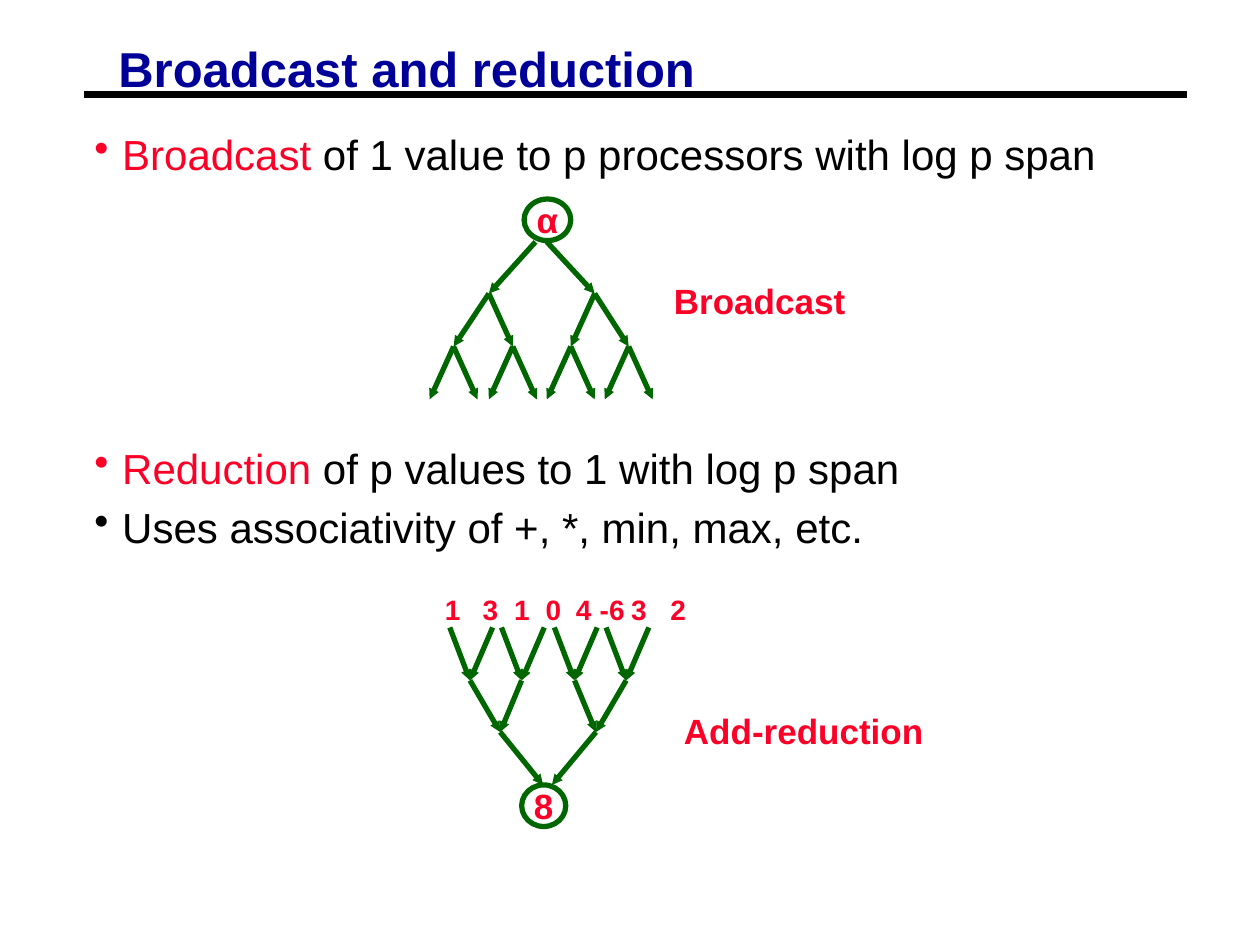
from dataclasses import dataclass

from lxml.etree import SubElement
from pptx import Presentation
from pptx.dml.color import RGBColor
from pptx.enum.shapes import MSO_CONNECTOR, MSO_SHAPE
from pptx.enum.text import MSO_ANCHOR, PP_ALIGN
from pptx.oxml.ns import qn
from pptx.util import Inches, Pt

FONT = "Arial"
NAVY, BLACK, RED, GREEN = "000099", "000000", "FC0128", "006600"


@dataclass
class Run:
    text: str
    size: float
    color: str
    bold: bool = False


@dataclass
class Bullet:
    runs: list[Run]
    space_before: float = 0


@dataclass
class Tree:
    """Binary tree, given by the x of its nodes and the y of its levels."""
    root_ends: list[float]
    inner: list[float]
    lower: list[float]
    leaf_offsets: tuple[float, float]
    levels: list[float]  # from root to leaves
    upward: bool  # arrows run from the leaves to the root


@dataclass
class Label:
    run: Run
    left: float
    top: float
    width: float


def rgb(color: str) -> RGBColor:
    return RGBColor.from_string(color)


def add_run(paragraph, run: Run) -> None:
    part = paragraph.add_run()
    part.text = run.text
    font = part.font
    font.name, font.size, font.bold = FONT, Pt(run.size), run.bold
    font.color.rgb = rgb(run.color)


def add_text_frame(slide, left: float, top: float, width: float, height: float,
                   side: float = 0.1, edge: float = 0.05):
    box = slide.shapes.add_textbox(Inches(left), Inches(top), Inches(width), Inches(height))
    frame = box.text_frame
    frame.word_wrap = True
    frame.margin_left = frame.margin_right = Inches(side)
    frame.margin_top = frame.margin_bottom = Inches(edge)
    return frame


def add_line(slide, start: tuple[float, float], end: tuple[float, float],
             color: str, width: float, arrow: bool = False) -> None:
    line = slide.shapes.add_connector(
        MSO_CONNECTOR.STRAIGHT, *(Inches(value) for value in (*start, *end)))
    line.line.color.rgb = rgb(color)
    line.line.width = Pt(width)
    if arrow:
        SubElement(line.line._get_or_add_ln(), qn("a:tailEnd"), type="triangle", w="sm", len="sm")
    SubElement(line._element.spPr, qn("a:effectLst"))


def add_bullet(paragraph, bullet: Bullet) -> None:
    paragraph.space_before = Pt(bullet.space_before)
    properties = paragraph._p.get_or_add_pPr()
    properties.set("marL", str(Inches(0.22)))
    properties.set("indent", str(-Inches(0.22)))
    SubElement(properties, qn("a:buChar"), char="•")
    for run in bullet.runs:
        add_run(paragraph, run)


def add_node(slide, text: str, left: float, top: float, width: float) -> None:
    node = slide.shapes.add_shape(
        MSO_SHAPE.OVAL, Inches(left), Inches(top), Inches(width), Inches(0.33))
    node.shadow.inherit = False
    node.fill.background()
    node.line.color.rgb = rgb(GREEN)
    node.line.width = Pt(3)
    frame = node.text_frame
    frame.word_wrap = False
    frame.vertical_anchor = MSO_ANCHOR.MIDDLE
    frame.paragraphs[0].alignment = PP_ALIGN.CENTER
    add_run(frame.paragraphs[0], Run(text, 20, RED, True))


def add_tree(slide, tree: Tree) -> None:
    leaves = [x + offset for x in tree.lower for offset in tree.leaf_offsets]
    # Each level pairs the x of every parent end with the x of its child
    rows = [
        list(zip(tree.root_ends, tree.inner)),
        [(tree.inner[i // 2], x) for i, x in enumerate(tree.lower)],
        [(tree.lower[i // 2], x) for i, x in enumerate(leaves)],
    ]
    for row, parent_y, child_y in zip(rows, tree.levels, tree.levels[1:]):
        for parent_x, child_x in row:
            parent, child = (parent_x, parent_y), (child_x, child_y)
            start, end = (child, parent) if tree.upward else (parent, child)
            add_line(slide, start, end, GREEN, 3, arrow=True)


def add_values(slide, values: list[str], tab_stops: list[float]) -> None:
    frame = add_text_frame(slide, 3.31, 4.65, 2.42, 0.37)
    frame.margin_left = Inches(0.22)
    paragraph = frame.paragraphs[0]
    stops = SubElement(paragraph._p.get_or_add_pPr(), qn("a:tabLst"))
    for stop in tab_stops:
        SubElement(stops, qn("a:tab"), pos=str(Inches(stop)), algn="l")
    add_run(paragraph, Run("\t".join(values), 16, RED, True))


BULLETS = [
    Bullet([Run("Broadcast", 24, RED),
            Run(" of 1 value to p processors with log p span", 24, BLACK)]),
    Bullet([Run("Reduction", 24, RED),
            Run(" of p values to 1 with log p span", 24, BLACK)], 150.5),
    Bullet([Run("Uses associativity of +, *, min, max, etc.", 24, BLACK)], 5),
]
BROADCAST = Tree([4.25, 4.34], [3.88, 4.72], [3.6, 4.07, 4.53, 4.99],
                 (-0.19, 0.19), [1.92, 2.33, 2.75, 3.17], upward=False)
REDUCTION = Tree([4.31, 4.38], [3.97, 4.73], [3.73, 4.14, 4.56, 4.97],
                 (-0.16, 0.18), [6.23, 5.81, 5.4, 4.98], upward=True)
LABELS = [
    Label(Run("Broadcast", 20, RED, True), 5.25, 2.17, 3.08),
    Label(Run("Add-reduction", 20, RED, True), 5.33, 5.58, 2.67),
]


def main() -> None:
    presentation = Presentation()
    presentation.slide_width, presentation.slide_height = Inches(10), Inches(7.5)
    slide = presentation.slides.add_slide(presentation.slide_layouts[6])

    # Title and rule
    add_line(slide, (0.67, 0.75), (9.42, 0.75), BLACK, 3.75)
    title = add_text_frame(slide, 0.87, 0.34, 8.54, 0.46, 0.07, 0.03).paragraphs[0]
    title.line_spacing = 0.87
    add_run(title, Run("Broadcast and reduction", 28, NAVY, True))

    # Bullets
    body = add_text_frame(slide, 0.68, 0.99, 8.67, 3.48, 0.07, 0.03)
    for index, bullet in enumerate(BULLETS):
        add_bullet(body.add_paragraph() if index else body.paragraphs[0], bullet)

    # Broadcast tree
    add_tree(slide, BROADCAST)
    add_node(slide, "α", 4.16, 1.58, 0.37)

    # Reduction tree
    add_tree(slide, REDUCTION)
    add_node(slide, "8", 4.14, 6.23, 0.35)
    add_values(slide, ["1", "3", "1", "0", "4", "-6", "3", "2"],
               [0.3, 0.55, 0.8, 1.04, 1.23, 1.48, 1.79])

    # Tree labels
    for label in LABELS:
        frame = add_text_frame(slide, label.left, label.top, label.width, 0.43)
        add_run(frame.paragraphs[0], label.run)

    presentation.save("out.pptx")


if __name__ == "__main__":
    main()
